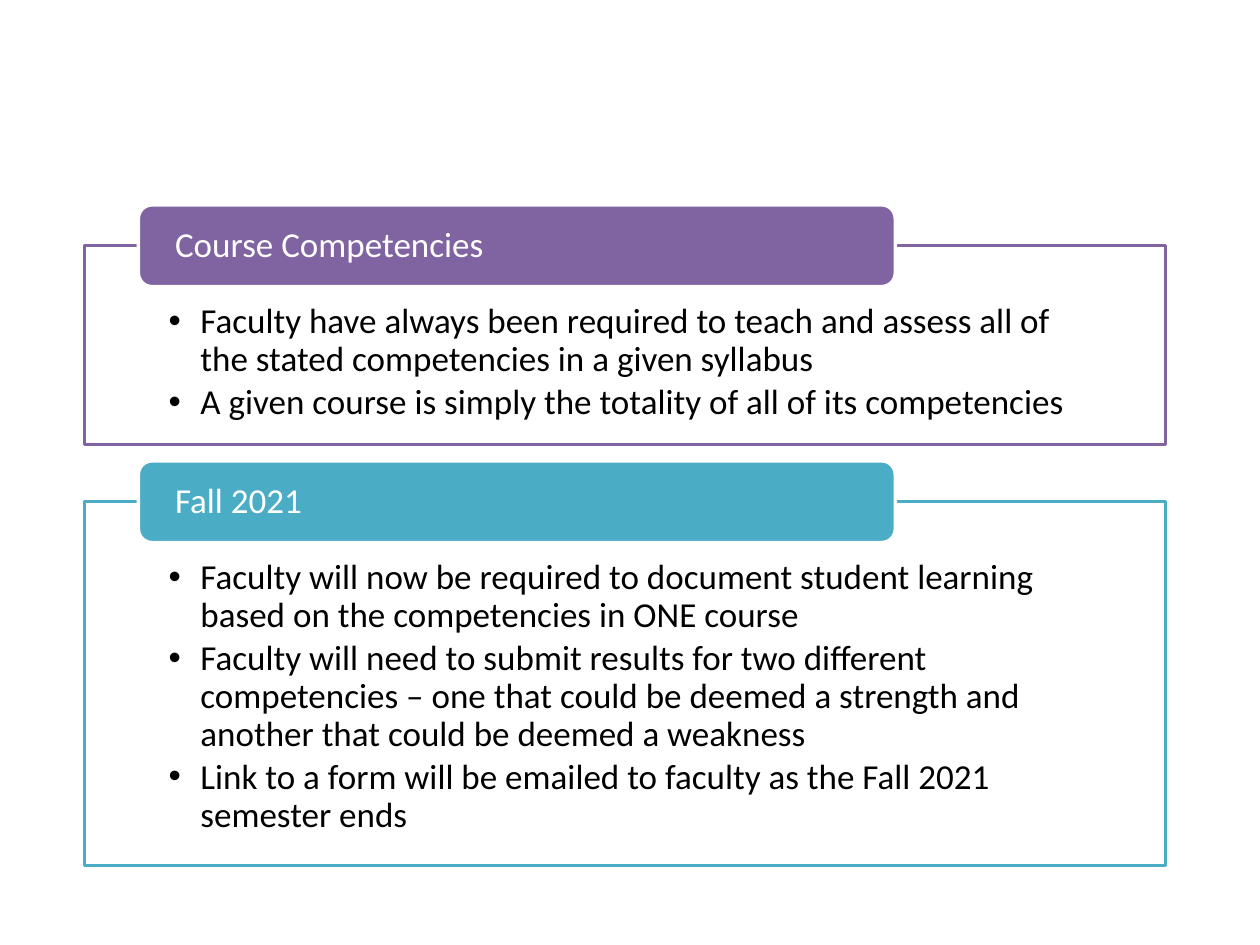
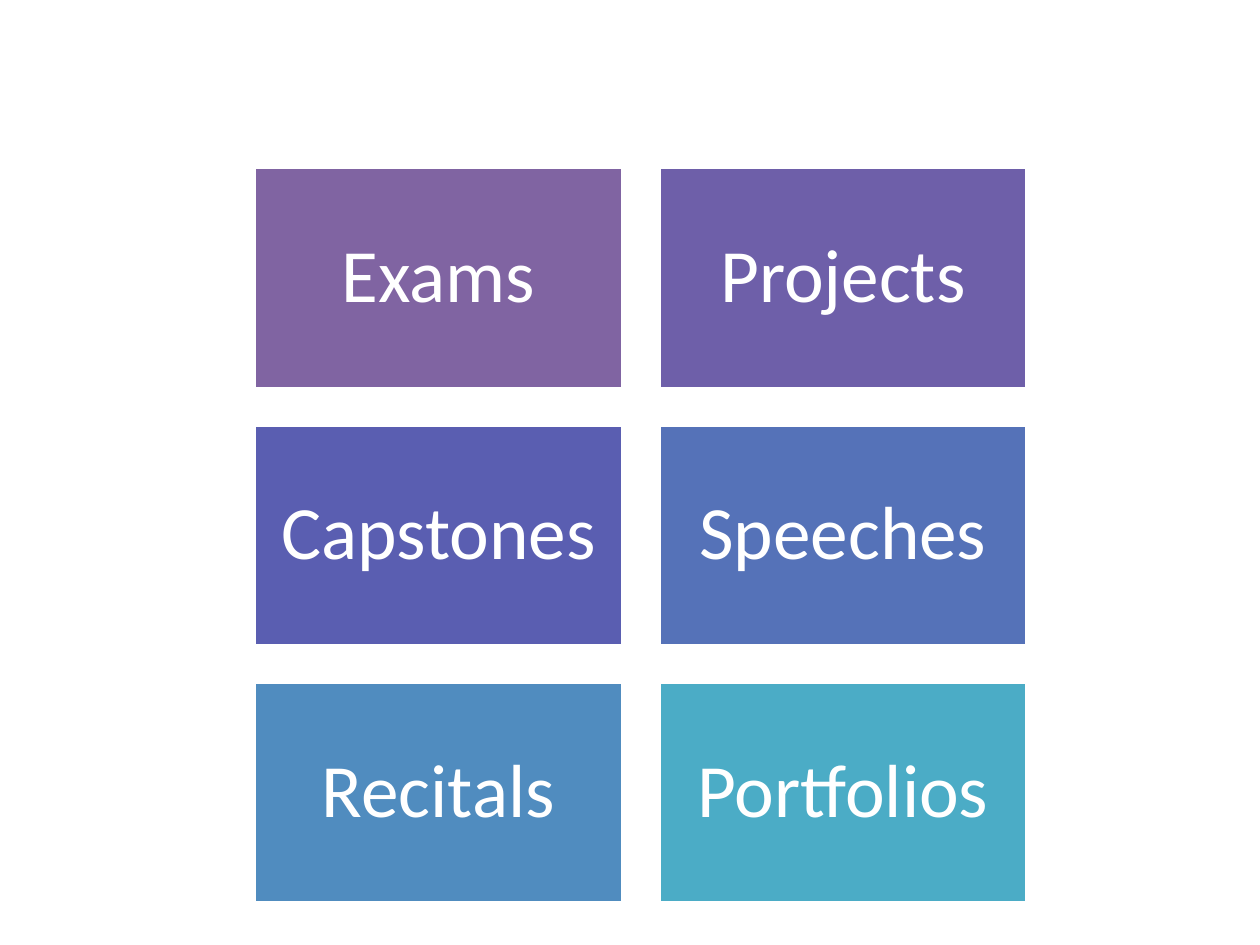
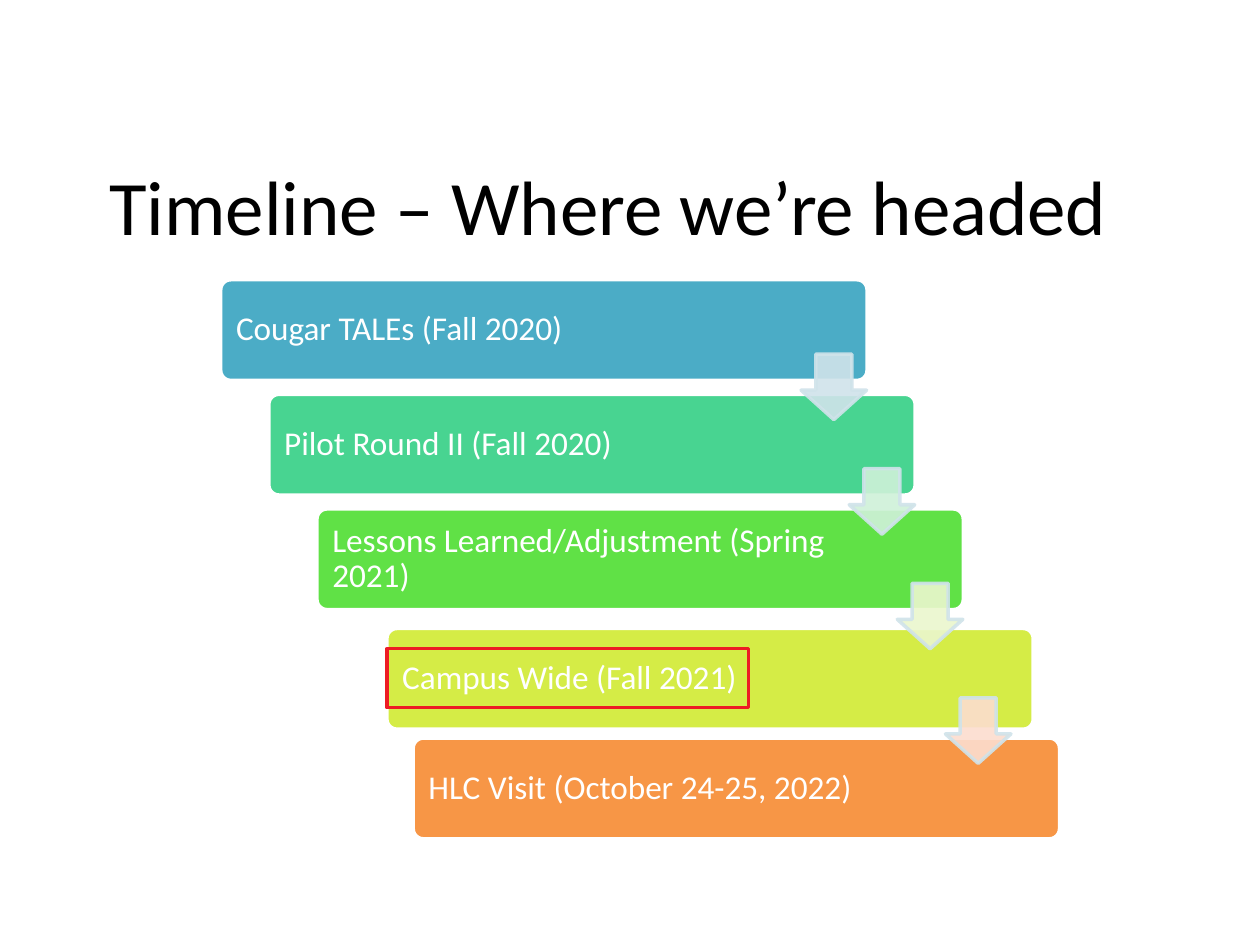
from dataclasses import dataclass

from lxml import etree
from pptx import Presentation
from pptx.dml.color import RGBColor
from pptx.enum.shapes import MSO_SHAPE
from pptx.enum.text import MSO_ANCHOR, MSO_AUTO_SIZE, PP_ALIGN
from pptx.oxml.ns import qn
from pptx.util import Cm, Pt

RECTANGLE = MSO_SHAPE.RECTANGLE
ROUNDED = MSO_SHAPE.ROUNDED_RECTANGLE
DOWN_ARROW = MSO_SHAPE.DOWN_ARROW
MIDDLE, TOP = MSO_ANCHOR.MIDDLE, MSO_ANCHOR.TOP
LEFT, CENTER = PP_ALIGN.LEFT, PP_ALIGN.CENTER
NO_FIT = MSO_AUTO_SIZE.NONE
TWO_CONTENT, TITLE_ONLY, BLANK = 3, 5, 6


@dataclass(frozen=True)
class Theme:
    font: str = "Calibri"
    ink: str = "000000"
    paper: str = "FFFFFF"
    purple: str = "8064A2"
    teal: str = "4BACC6"
    arrow_edge: str = "D0E3EA"
    highlight: str = "ED1C24"
    title_size: float = 44
    tile_size: float = 43
    card_size: float = 20
    step_size: float = 19
    line_width: float = 2
    opacity: int = 90


THEME = Theme()

CARDS = [
    (4.95, 4.01, THEME.purple, "Course Competencies", [
        "Faculty have always been required to teach and assess all of the "
        "stated competencies in a given syllabus",
        "A given course is simply the totality of all of its competencies",
    ]),
    (10.11, 7.34, THEME.teal, "Fall 2021", [
        "Faculty will now be required to document student learning based on "
        "the competencies in ONE course",
        "Faculty will need to submit results for two different competencies – "
        "one that could be deemed a strength and another that could be deemed "
        "a weakness",
        "Link to a form will be emailed to faculty as the Fall 2021 semester ends",
    ]),
]

TILES = [
    ("Exams", THEME.purple), ("Projects", "6E5FA9"),
    ("Capstones", "5A5EB1"), ("Speeches", "5572B8"),
    ("Recitals", "508CBF"), ("Portfolios", THEME.teal),
]

STEPS = [
    ("Cougar TALEs (Fall 2020)", THEME.teal),
    ("Pilot Round II (Fall 2020)", "48D491"),
    ("Lessons Learned/Adjustment (Spring 2021)", "60E146"),
    ("Campus Wide (Fall 2021)", "D5EC46"),
    ("HLC Visit (October 24-25, 2022)", "F79646"),
]
ARROW_FILLS = ["D0E3EA", "CFF1D9", "EBF7CE", "FCDDCF"]
HIGHLIGHTED_STEP = 3


def paint(shape, fill, line, width=THEME.line_width):
    if fill:
        shape.fill.solid()
        shape.fill.fore_color.rgb = RGBColor.from_string(fill)
    else:
        shape.fill.background()
    shape.line.color.rgb = RGBColor.from_string(line)
    shape.line.width = Pt(width)


def fade(shape):
    """Make the fill and line colours slightly transparent."""
    for color in shape.element.spPr.iter(qn("a:srgbClr")):
        etree.SubElement(color, qn("a:alpha"), val=str(THEME.opacity * 1000))


def place(shape, left, top, width, height):
    shape.left, shape.top = Cm(left), Cm(top)
    shape.width, shape.height = Cm(width), Cm(height)


def add_figure(page, kind, box, fill, line, width=THEME.line_width):
    figure = page.shapes.add_shape(kind, *map(Cm, box))
    figure.shadow.inherit = False
    paint(figure, fill, line, width)
    return figure


def set_frame(frame, insets, anchor):
    frame.word_wrap = True
    frame.auto_size = NO_FIT
    frame.vertical_anchor = anchor
    (frame.margin_left, frame.margin_top,
     frame.margin_right, frame.margin_bottom) = map(Cm, insets)


def style_paragraph(para, size, color, align=LEFT):
    para.alignment = align
    para.font.name = THEME.font
    para.font.size = Pt(size)
    para.font.color.rgb = RGBColor.from_string(color)


def write_label(shape, text, size, insets, align=LEFT):
    set_frame(shape.text_frame, insets, MIDDLE)
    para = shape.text_frame.paragraphs[0]
    para.text = text
    para.line_spacing = 0.9
    style_paragraph(para, size, THEME.paper, align)


def write_bullets(frame, items):
    for index, item in enumerate(items):
        para = frame.add_paragraph() if index else frame.paragraphs[0]
        para.text = item
        para.line_spacing = 0.9
        para.space_before, para.space_after = Pt(0), Pt(3)
        properties = para._p.get_or_add_pPr()
        properties.set("marL", str(Cm(0.64)))
        properties.set("indent", str(-Cm(0.64)))
        etree.SubElement(properties, qn("a:buChar"), char="•")
        style_paragraph(para, THEME.card_size, THEME.ink)


def add_card(page, body, box, color, heading, items):
    """Frame a bulleted list and set a heading tab on its top edge."""
    left, top, width, height = box
    place(body, *box)
    paint(body, THEME.paper, color)
    set_frame(body.text_frame, (1.7, 1.17, 1.7, 0.41), TOP)
    write_bullets(body.text_frame, items)
    tab_box = (left + 1.09, top - 0.82, 0.7 * width, 1.65)
    tab = add_figure(page, ROUNDED, tab_box, color, THEME.paper)
    write_label(tab, heading, THEME.card_size, (0.66, 0, 0.66, 0))


def build_competencies(deck):
    page = deck.slides.add_slide(deck.slide_layouts[TWO_CONTENT])
    title, *bodies = page.placeholders
    title.element.getparent().remove(title.element)
    for body, (top, height, color, heading, items) in zip(bodies, CARDS):
        add_card(page, body, (1.7, top, 21.8, height), color, heading, items)


def add_tiles(page, box, columns=2, gap=0.74):
    left, top, width, height = box
    rows = len(TILES) // columns
    tile_width = (width - gap * (columns - 1)) / columns
    tile_height = (height - gap * (rows - 1)) / rows
    for index, (text, color) in enumerate(TILES):
        row, column = divmod(index, columns)
        tile_box = (left + column * (tile_width + gap),
                    top + row * (tile_height + gap), tile_width, tile_height)
        tile = add_figure(page, RECTANGLE, tile_box, color, THEME.paper)
        write_label(tile, text, THEME.tile_size, (0.46,) * 4, CENTER)


def build_assessments(deck):
    page = deck.slides.add_slide(deck.slide_layouts[BLANK])
    add_tiles(page, (5.13, 3.38, 15.57, 14.83))


def add_staircase(page, box):
    """Lay the steps from top left to bottom right, then the arrows over them."""
    left, top, width, height = box
    step_width, step_height = 13.03, 2.03
    intervals = len(STEPS) - 1
    shift = (width - step_width) / intervals
    drop = (height - step_height) / intervals
    for index, (text, color) in enumerate(STEPS):
        x, y = left + index * shift, top + index * drop
        if index == HIGHLIGHTED_STEP:
            x, y = x + 0.44, y + 0.1
            highlight_box = (x, y + 0.41, 7.29, 1.19)
        step = add_figure(page, ROUNDED, (x, y, step_width, step_height),
                          color, THEME.paper)
        step.adjustments[0] = 0.1
        write_label(step, text, THEME.step_size, (0.25, 0.2, 2.57, 0.2))
    for index, color in enumerate(ARROW_FILLS):
        arrow_box = (left + 11.7 + index * shift, top + 1.5 + index * drop,
                     1.32, 1.32)
        arrow = add_figure(page, DOWN_ARROW, arrow_box, color, THEME.arrow_edge)
        arrow.adjustments[0], arrow.adjustments[1] = 0.55, 0.45
        fade(arrow)
    add_figure(page, RECTANGLE, highlight_box, None, THEME.highlight, 1.89)


def build_timeline(deck):
    page = deck.slides.add_slide(deck.slide_layouts[TITLE_ONLY])
    title = page.shapes.title
    place(title, 0.84, 2.54, 22.86, 3.18)
    title.text_frame.text = "Timeline – Where we’re headed"
    title.text_frame.vertical_anchor = MIDDLE
    style_paragraph(title.text_frame.paragraphs[0], THEME.title_size,
                    THEME.ink, CENTER)
    add_staircase(page, (4.45, 5.64, 16.91, 11.27))


def main():
    deck = Presentation()
    deck.slide_width, deck.slide_height = Cm(25.4), Cm(19.05)
    build_competencies(deck)
    build_assessments(deck)
    build_timeline(deck)
    deck.save("out.pptx")


if __name__ == "__main__":
    main()
